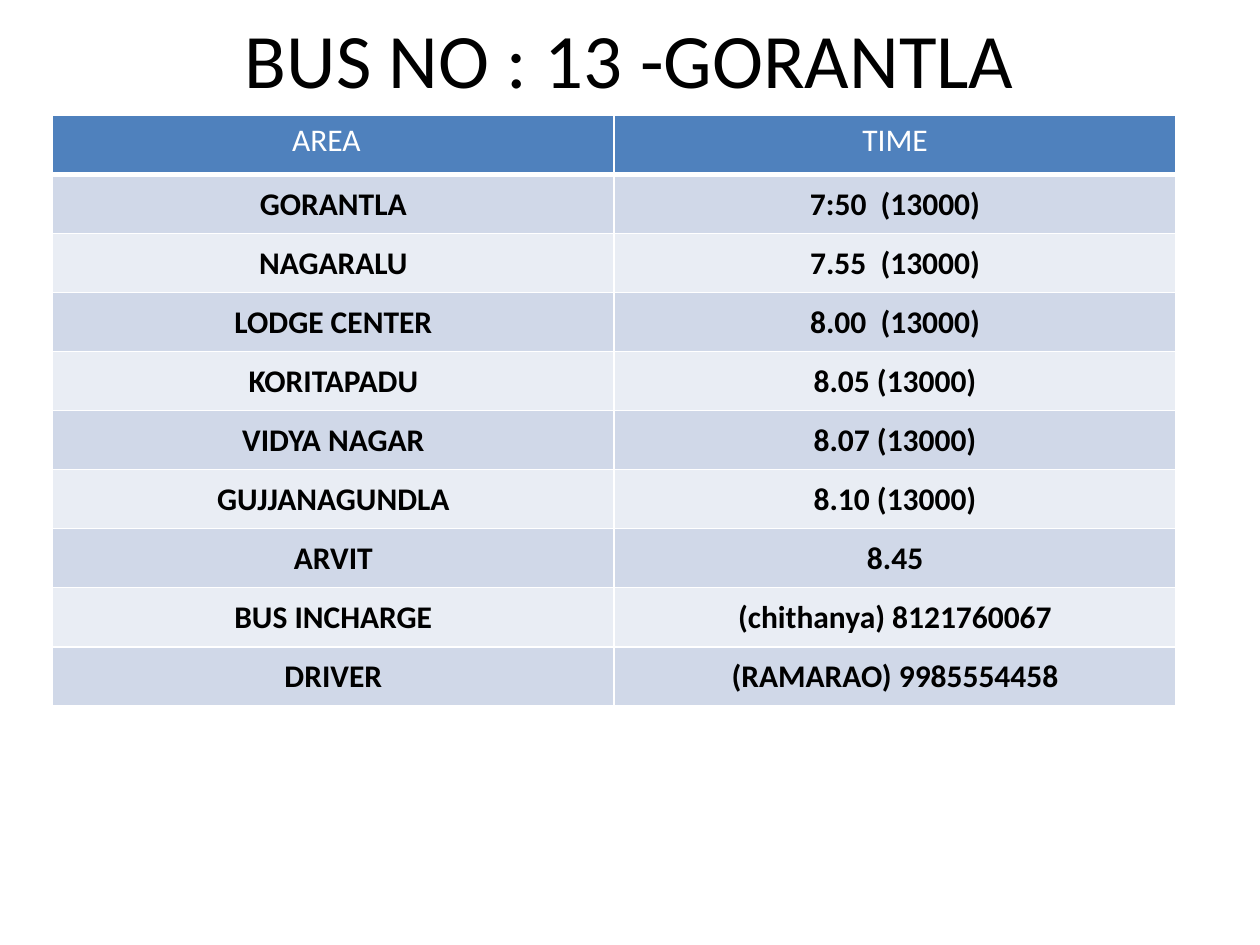
from pptx import Presentation
from pptx.dml.color import RGBColor
from pptx.enum import text
from pptx.oxml import ns
from pptx.util import Pt
from lxml import etree

COLORS = {
    "title": "000000",
    "header": "4F81BD",
    "header_text": "FFFFFF",
    "odd": "D0D8E8",
    "even": "E9EDF4",
    "body_text": "000000",
    "border": "FFFFFF",
}
ROWS = [
    ("AREA", "TIME"),
    ("GORANTLA", "7:50  (13000)"),
    ("NAGARALU", "7.55  (13000)"),
    ("LODGE CENTER", "8.00  (13000)"),
    ("KORITAPADU", "8.05 (13000)"),
    ("VIDYA NAGAR", "8.07 (13000)"),
    ("GUJJANAGUNDLA", "8.10 (13000)"),
    ("ARVIT", "8.45"),
    ("BUS INCHARGE", "(chithanya) 8121760067"),
    ("DRIVER", "(RAMARAO) 9985554458"),
]
MIDDLE = text.MSO_ANCHOR.MIDDLE
BODY = {"vertical_anchor": MIDDLE, "margin_left": Pt(0.72), "margin_top": Pt(0.72),
        "margin_right": Pt(0.72), "margin_bottom": Pt(0)}
HEADERS = [{"margin_right": Pt(15.2)}, {"margin_right": Pt(7.2)}]


def write(tf, words, size, color, bold=False):
    p = tf.paragraphs[0]
    p.alignment = text.PP_ALIGN.CENTER
    r = p.add_run()
    r.text = words
    for name, value in {"name": "Calibri", "size": Pt(size), "bold": bold}.items():
        setattr(r.font, name, value)
    r.font.color.rgb = RGBColor.from_string(COLORS[color])


def add_border(cell, side, width):
    ln = etree.SubElement(cell._tc.get_or_add_tcPr(), ns.qn(f"a:ln{side}"), w=str(Pt(width)))
    fill = etree.SubElement(ln, ns.qn("a:solidFill"))
    etree.SubElement(fill, ns.qn("a:srgbClr"), val=COLORS["border"])


prs = Presentation()
prs.slide_width, prs.slide_height = Pt(720), Pt(540)
s = prs.slides.add_slide(prs.slide_layouts[6])

sp = s.shapes.add_textbox(Pt(54), Pt(0), Pt(612), Pt(66))
tf = sp.text_frame
tf.word_wrap = True
tf.vertical_anchor = MIDDLE
write(tf, "BUS NO : 13 -GORANTLA", 44, "title")

table = s.shapes.add_table(len(ROWS), 2, Pt(30), Pt(66), Pt(642), Pt(337.5)).table
for row in table.rows:
    row.height = Pt(33.75)

for i, row in enumerate(ROWS):
    for j, words in enumerate(row):
        cell = table.cell(i, j)
        header = i == 0
        for name, value in (HEADERS[j] if header else BODY).items():
            setattr(cell, name, value)
        for side in "LRTB":
            add_border(cell, side, 3 if header and side == "B" else 1)
        cell.fill.solid()
        band = "header" if header else "odd" if i % 2 else "even"
        cell.fill.fore_color.rgb = RGBColor.from_string(COLORS[band])
        write(cell.text_frame, words, 18, "header_text" if header else "body_text", not header)

prs.save("out.pptx")
